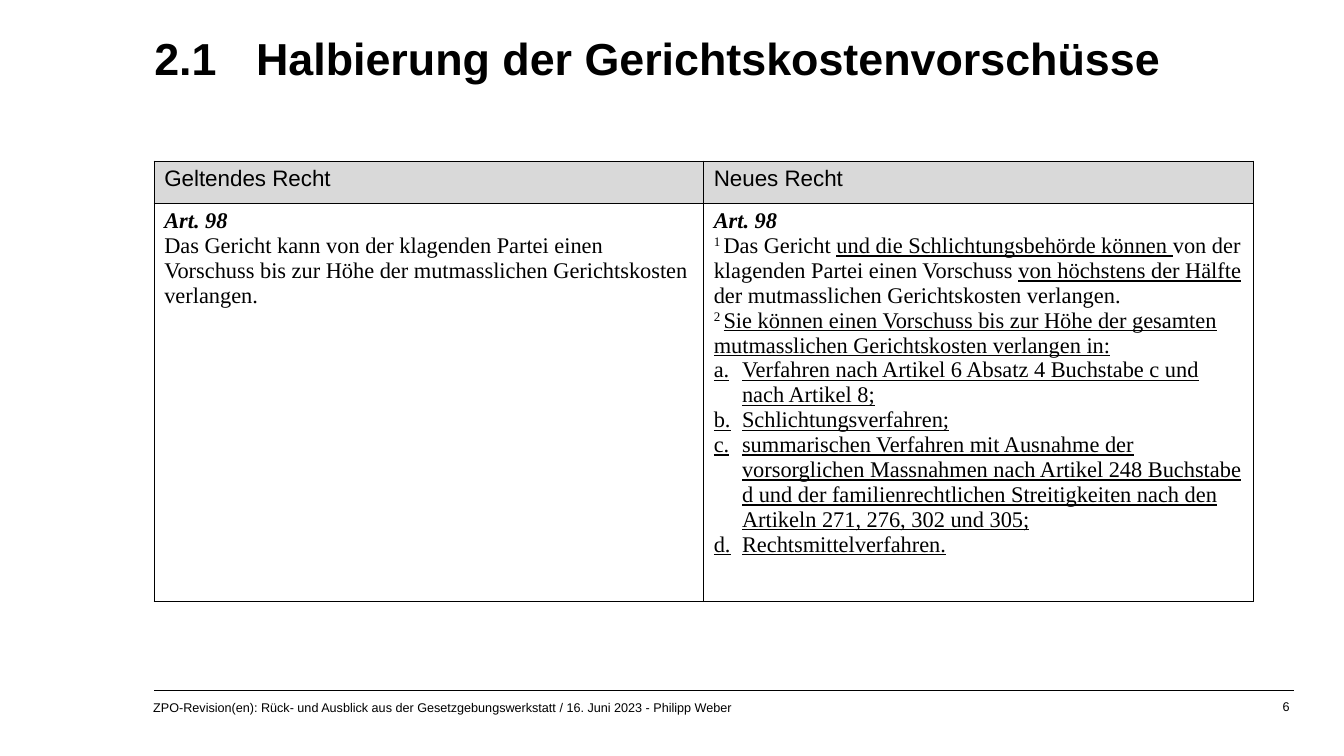
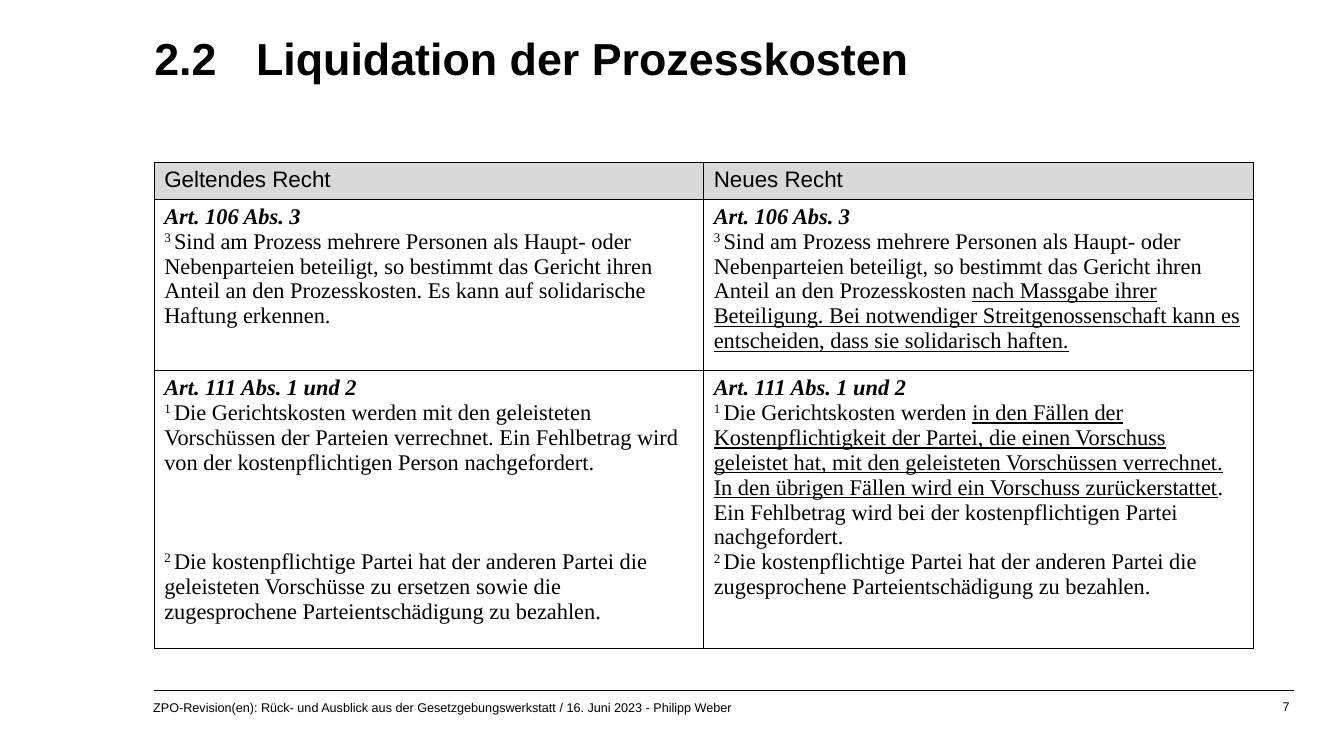
"""Build two slides that compare current and new law on court costs."""
from lxml import etree
from pptx import Presentation
from pptx.dml.color import RGBColor
from pptx.enum.shapes import MSO_CONNECTOR
from pptx.enum.text import MSO_ANCHOR, MSO_AUTO_SIZE, PP_ALIGN
from pptx.oxml import parse_xml
from pptx.oxml.ns import nsdecls, qn
from pptx.util import Inches, Pt

BLACK = "000000"
HEADER_GREY = "D9D9D9"
HEADING_FONT = "Arial"
LAW_FONT = "Times New Roman"
LEFT = 1.53
TITLE_TAB = 1.01
LIST_INDENT = 0.28
COLUMN_WIDTH = 5.45
FOOTER = "ZPO-Revision(en): Rück- und Ausblick aus der Gesetzgebungswerkstatt / 16. Juni 2023 - Philipp Weber"
COLUMN_TITLES = ["Geltendes Recht", "Neues Recht"]

# Underscores switch underlining on and off; each clause is (number, text, space before).
SLIDES = [
    {
        "number": "2.1",
        "title": "Halbierung der Gerichtskostenvorschüsse",
        "top": 1.6,
        "heights": [0.42, 3.95],
        "articles": [
            ("Art. 98",
             [("", "Das Gericht kann von der klagenden Partei einen Vorschuss bis zur Höhe der "
                   "mutmasslichen Gerichtskosten verlangen.", 0)],
             [("1", "Das Gericht _und die Schlichtungsbehörde können _von der klagenden Partei einen "
                    "Vorschuss _von höchstens der Hälfte_ der mutmasslichen Gerichtskosten verlangen.", 0),
              ("2", "_Sie können einen Vorschuss bis zur Höhe der gesamten mutmasslichen "
                    "Gerichtskosten verlangen in:", 0),
              ("a.", "_Verfahren nach Artikel 6 Absatz 4 Buchstabe c und nach Artikel 8;", 0),
              ("b.", "_Schlichtungsverfahren;", 0),
              ("c.", "_summarischen Verfahren mit Ausnahme der vorsorglichen Massnahmen nach "
                     "Artikel 248 Buchstabe d und der familienrechtlichen Streitigkeiten nach den "
                     "Artikeln 271, 276, 302 und 305;", 0),
              ("d.", "_Rechtsmittelverfahren.", 0)]),
        ],
    },
    {
        "number": "2.2",
        "title": "Liquidation der Prozesskosten",
        "top": 1.61,
        "heights": [0.34, 1.58, 2.76],
        "articles": [
            ("Art. 106 Abs. 3",
             [("3", "Sind am Prozess mehrere Personen als Haupt- oder Nebenparteien beteiligt, so "
                    "bestimmt das Gericht ihren Anteil an den Prozesskosten. Es kann auf "
                    "solidarische Haftung erkennen.", 0)],
             [("3", "Sind am Prozess mehrere Personen als Haupt- oder Nebenparteien beteiligt, so "
                    "bestimmt das Gericht ihren Anteil an den Prozesskosten _nach Massgabe ihrer "
                    "Beteiligung. Bei notwendiger Streitgenossenschaft kann es entscheiden, dass "
                    "sie solidarisch haften.", 0)]),
            ("Art. 111 Abs. 1 und 2",
             [("1", "Die Gerichtskosten werden mit den geleisteten Vorschüssen der Parteien "
                    "verrechnet. Ein Fehlbetrag wird von der kostenpflichtigen Person "
                    "nachgefordert.", 0),
              ("2", "Die kostenpflichtige Partei hat der anderen Partei die geleisteten Vorschüsse "
                    "zu ersetzen sowie die zugesprochene Parteientschädigung zu bezahlen.", 53)],
             [("1", "Die Gerichtskosten werden _in den Fällen der Kostenpflichtigkeit der Partei, die "
                    "einen Vorschuss geleistet hat, mit den geleisteten Vorschüssen verrechnet. In den "
                    "übrigen Fällen wird ein Vorschuss zurückerstattet_. Ein Fehlbetrag wird bei der "
                    "kostenpflichtigen Partei nachgefordert.", 0),
              ("2", "Die kostenpflichtige Partei hat der anderen Partei die zugesprochene "
                    "Parteientschädigung zu bezahlen.", 0)]),
        ],
    },
]


def color(value):
    return RGBColor.from_string(value)


def format_paragraph(paragraph, font_name, size, tab=None):
    if tab:
        properties = paragraph._p.get_or_add_pPr()
        tabs = etree.SubElement(properties, qn("a:tabLst"))
        etree.SubElement(tabs, qn("a:tab"), pos=str(Inches(tab)), algn="l")
    paragraph.font.name = font_name
    paragraph.font.size = Pt(size)
    paragraph.font.color.rgb = color(BLACK)


presentation = Presentation()
presentation.slide_width = Inches(13.33)
presentation.slide_height = Inches(7.5)

for page, content in enumerate(SLIDES, start=6):
    slide = presentation.slides.add_slide(presentation.slide_layouts[5])

    title = slide.shapes.title
    title.left, title.top = Inches(LEFT), Inches(0.34)
    title.width, title.height = Inches(11.28), Inches(0.98)
    frame = title.text_frame
    frame.margin_left = frame.margin_right = frame.margin_top = frame.margin_bottom = 0
    frame.vertical_anchor = MSO_ANCHOR.TOP
    frame.auto_size = MSO_AUTO_SIZE.NONE
    frame.text = f"{content['number']}\t{content['title']}"
    paragraph = frame.paragraphs[0]
    paragraph.alignment = PP_ALIGN.LEFT
    paragraph.line_spacing = Pt(36)
    format_paragraph(paragraph, HEADING_FONT, 32, TITLE_TAB)
    paragraph.font.bold = True

    rule = slide.shapes.add_connector(
        MSO_CONNECTOR.STRAIGHT, Inches(LEFT), Inches(6.85), Inches(12.83), Inches(6.85))
    rule.line.color.rgb = color(BLACK)
    rule.line.width = Pt(0.75)
    etree.SubElement(rule._element.spPr, qn("a:effectLst"))

    for text, left, top, width, alignment in [
        (FOOTER, 1.52, 6.94, 9.77, PP_ALIGN.LEFT),
        (str(page), 12.14, 6.93, 0.65, PP_ALIGN.RIGHT),
    ]:
        box = slide.shapes.add_textbox(Inches(left), Inches(top), Inches(width), Inches(0.2))
        frame = box.text_frame
        frame.word_wrap = True
        frame.margin_left = frame.margin_right = frame.margin_top = frame.margin_bottom = 0
        frame.text = text
        frame.paragraphs[0].alignment = alignment
        format_paragraph(frame.paragraphs[0], HEADING_FONT, 9)

    heights = content["heights"]
    table = slide.shapes.add_table(
        len(heights), 2, Inches(LEFT), Inches(content["top"]),
        Inches(2 * COLUMN_WIDTH), Inches(sum(heights))).table
    table.first_row = table.horz_banding = False
    for column in table.columns:
        column.width = Inches(COLUMN_WIDTH)
    for row, height in zip(table.rows, heights):
        row.height = Inches(height)

    for cell in table.iter_cells():
        properties = cell._tc.get_or_add_tcPr()
        for side in ("lnL", "lnR", "lnT", "lnB"):
            properties.append(parse_xml(
                f'<a:{side} {nsdecls("a")} w="{Pt(1)}"><a:solidFill>'
                f'<a:srgbClr val="{BLACK}"/></a:solidFill></a:{side}>'))
        cell.fill.background()

    for index, text in enumerate(COLUMN_TITLES):
        cell = table.cell(0, index)
        cell.fill.solid()
        cell.fill.fore_color.rgb = color(HEADER_GREY)
        cell.text = text
        format_paragraph(cell.text_frame.paragraphs[0], HEADING_FONT, 16)

    for row_index, (heading, *versions) in enumerate(content["articles"], start=1):
        for column_index, clauses in enumerate(versions):
            frame = table.cell(row_index, column_index).text_frame
            frame.text = heading
            paragraph = frame.paragraphs[0]
            format_paragraph(paragraph, LAW_FONT, 16)
            paragraph.font.bold = paragraph.font.italic = True

            for number, text, space_before in clauses:
                paragraph = frame.add_paragraph()
                is_list_item = number.endswith(".")
                if space_before:
                    paragraph.space_before = Pt(space_before)
                if is_list_item:
                    properties = paragraph._p.get_or_add_pPr()
                    properties.set("marL", str(Inches(LIST_INDENT)))
                    properties.set("indent", str(-Inches(LIST_INDENT)))
                format_paragraph(paragraph, LAW_FONT, 16, LIST_INDENT if is_list_item else None)
                if is_list_item:
                    run = paragraph.add_run()
                    run.text = f"{number}\t"
                    run.font.underline = True
                elif number:
                    run = paragraph.add_run()
                    run.text = f"{number} "
                    run._r.get_or_add_rPr().set("baseline", "30000")
                for part_index, part in enumerate(text.split("_")):
                    if part:
                        run = paragraph.add_run()
                        run.text = part
                        if part_index % 2:
                            run.font.underline = True

presentation.save("out.pptx")
